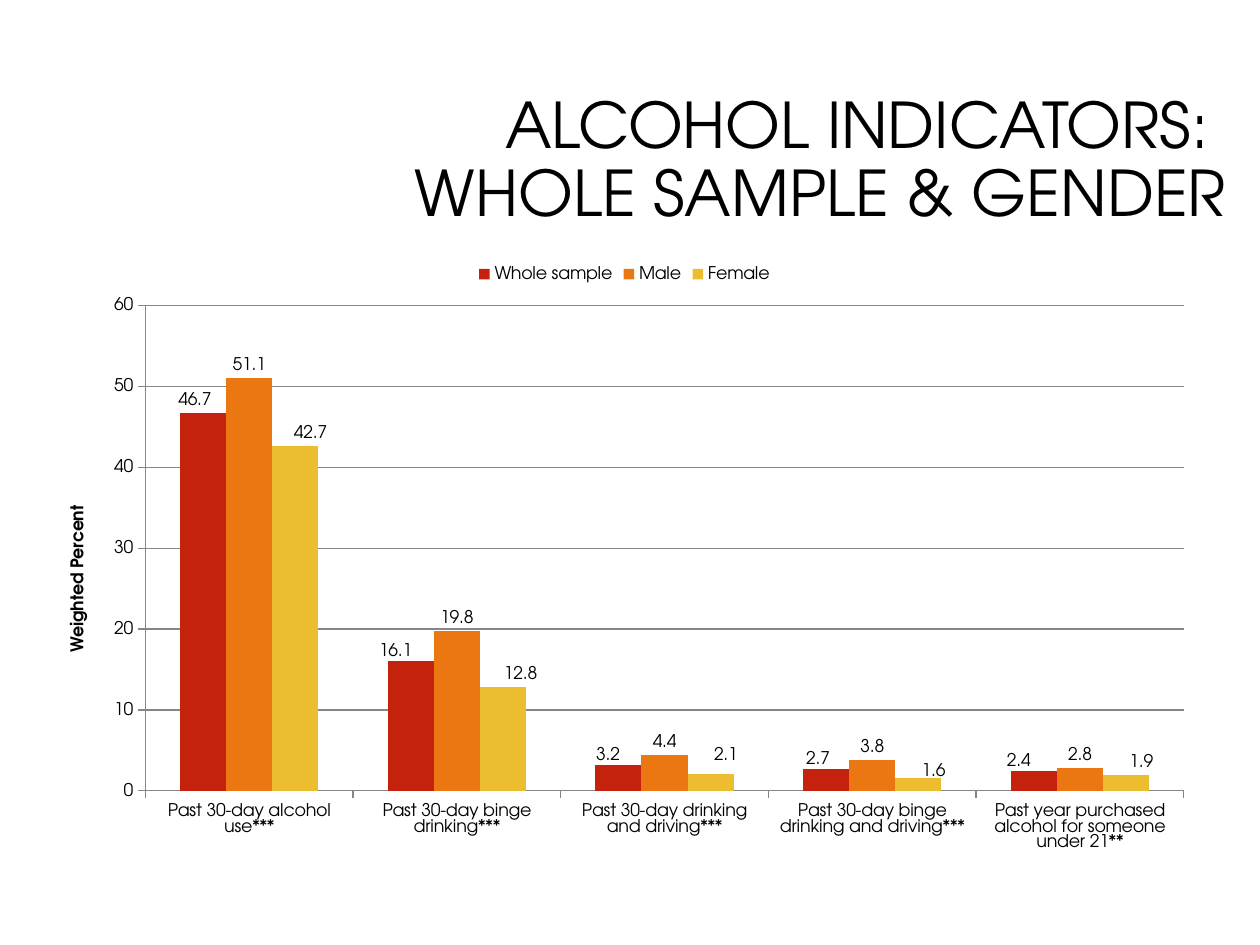
from pptx import Presentation, util as u
from pptx.chart.data import CategoryChartData
from pptx.dml.color import RGBColor
from pptx.enum import chart as ch, text
from pptx.oxml import parse_xml
from pptx.oxml.ns import nsdecls, qn

Pt = u.Pt
FONT = "TeX Gyre Adventor"
BLACK = RGBColor(0, 0, 0)
GRAY = RGBColor(0x86, 0x86, 0x86)
RED = RGBColor(0xC4, 0x22, 0x0D)
ORANGE = RGBColor(0xEB, 0x77, 0x12)
YELLOW = RGBColor(0xEC, 0xBD, 0x31)

INDICATORS = [
    "Past 30-day alcohol use***",
    "Past 30-day binge drinking***",
    "Past 30-day drinking and driving***",
    "Past 30-day binge drinking and driving***",
    "Past year purchased alcohol for someone under 21**",
]
# Name, colour, values, label shifts as percent of the chart's width and height
GROUPS = [
    ("Whole sample", RED, (46.7, 16.1, 3.2, 2.7, 2.4),
     [(-0.7, 0), (-1.3, 0.5), (-0.9, 0.5), (-0.7, 0.5), (-1.3, 0.5)]),
    ("Male", ORANGE, (51.1, 19.8, 4.4, 3.8, 2.8), []),
    ("Female", YELLOW, (42.7, 12.8, 2.1, 1.6, 1.9),
     [(1.3, 0), (1.5, 0), (1.3, -1), (1.3, 1), (1.3, 0)]),
]


def style_font(font, size, bold=False):
    font.name, font.size, font.bold = FONT, Pt(size), bold
    font.color.rgb = BLACK


def set_layout(parent, index, **settings):
    """Give a chart part a manual layout, as child number index."""
    old = parent.find(qn("c:layout"))
    if old is not None:
        index = parent.index(old)
        parent.remove(old)
    items = "".join(f'<c:{tag} val="{val}"/>' for tag, val in settings.items())
    parent.insert(index, parse_xml(
        f'<c:layout {nsdecls("c")}><c:manualLayout>{items}'
        "</c:manualLayout></c:layout>"))


def add_title(slide):
    box = slide.shapes.add_textbox(Pt(206), Pt(41.8), Pt(501.8), Pt(101.5))
    frame = box.text_frame
    frame.word_wrap = True
    frame.vertical_anchor = text.MSO_ANCHOR.MIDDLE
    title = frame.paragraphs[0]
    title.text = "ALCOHOL INDICATORS: \vWHOLE SAMPLE & GENDER"
    title.alignment = text.PP_ALIGN.RIGHT
    title.line_spacing = 0.9
    style_font(title.font, 36)


def style_axes(chart):
    percent = chart.value_axis
    percent.minimum_scale, percent.maximum_scale = 0, 60
    percent.major_unit = 10
    percent.has_major_gridlines = True
    percent.tick_labels.number_format = "General"
    percent.tick_labels.number_format_is_linked = False
    for line in (percent.format.line, percent.major_gridlines.format.line,
                 chart.category_axis.format.line):
        line.color.rgb = GRAY
        line.width = Pt(0.75)
    for axis in (percent, chart.category_axis):
        axis.major_tick_mark = ch.XL_TICK_MARK.OUTSIDE
        axis.minor_tick_mark = ch.XL_TICK_MARK.NONE
        style_font(axis.tick_labels.font, 10)

    caption = percent.axis_title
    caption.text_frame.text = "Weighted Percent"
    style_font(caption.text_frame.paragraphs[0].font, 10, bold=True)
    set_layout(caption._element, 1, xMode="edge", yMode="edge",
               x=0.02, y=0.41)


def style_series(series, color, shifts):
    series.format.fill.solid()
    series.format.fill.fore_color.rgb = color
    labels = series.data_labels
    labels.show_value = True
    labels.number_format = "0.0"
    labels.number_format_is_linked = False
    labels.position = ch.XL_LABEL_POSITION.OUTSIDE_END
    style_font(labels.font, 10)
    # Labels moved away from the neighbouring bars
    for i, (dx, dy) in enumerate(shifts):
        series.points[i].data_label.position = ch.XL_LABEL_POSITION.OUTSIDE_END
        point_label = labels._element.findall(qn("c:dLbl"))[i]
        set_layout(point_label, 1, x=dx / 100, y=dy / 100)


def add_indicator_chart(slide):
    data = CategoryChartData(number_format="General")
    data.categories = INDICATORS
    for name, _, values, _ in GROUPS:
        data.add_series(name, values)
    chart = slide.shapes.add_chart(
        ch.XL_CHART_TYPE.COLUMN_CLUSTERED,
        Pt(23.8), Pt(144), Pt(666), Pt(349.2), data).chart
    chart.has_title = False
    style_font(chart.font, 10)

    # Legend
    chart.has_legend = True
    chart.legend.position = ch.XL_LEGEND_POSITION.TOP
    chart.legend.include_in_layout = False
    style_font(chart.legend.font, 10)

    # Axes and columns
    style_axes(chart)
    columns = chart.plots[0]
    columns.gap_width, columns.overlap = 150, 0
    columns.vary_by_categories = False
    for series, (_, color, _, shifts) in zip(columns.series, GROUPS):
        style_series(series, color, shifts)
    plot_area = chart._chartSpace.chart.plotArea
    set_layout(plot_area, 0, layoutTarget="inner", xMode="edge", yMode="edge",
               x=0.089, y=0.088, w=0.891, h=0.794)


def main():
    deck = Presentation()
    deck.slide_width, deck.slide_height = Pt(720), Pt(540)
    slide = deck.slides.add_slide(deck.slide_layouts[6])
    add_title(slide)
    add_indicator_chart(slide)
    deck.save("out.pptx")


if __name__ == "__main__":
    main()
